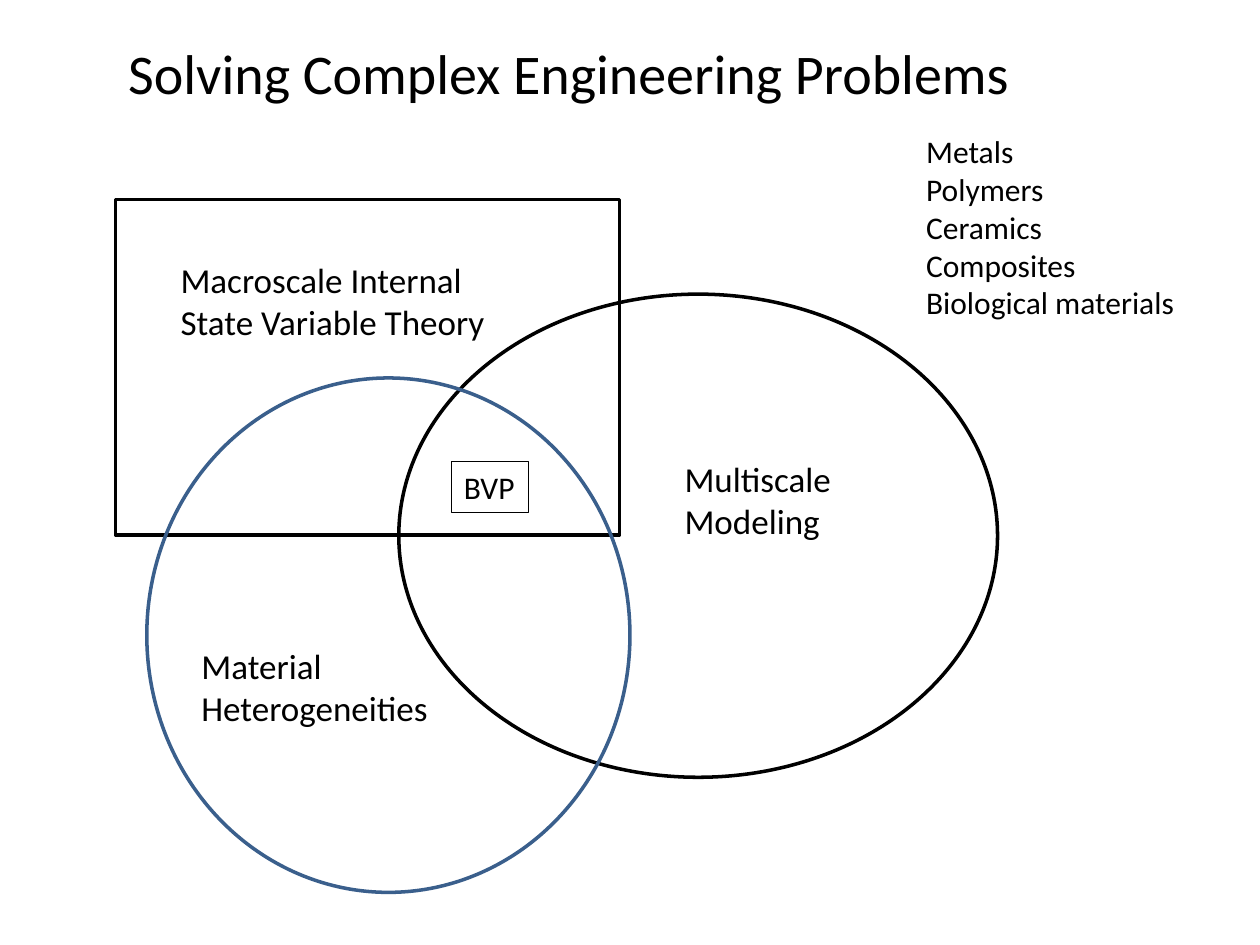
from dataclasses import dataclass

from pptx import Presentation
from pptx.dml.color import RGBColor
from pptx.enum.shapes import MSO_SHAPE as Shape
from pptx.enum.text import MSO_ANCHOR as Anchor, MSO_AUTO_SIZE as AutoSize, PP_ALIGN as Align
from pptx.util import Cm, Pt


@dataclass(frozen=True)
class Theme:
    font: str = "Calibri"
    ink: RGBColor = RGBColor(0x00, 0x00, 0x00)
    blue: RGBColor = RGBColor(0x3A, 0x5F, 0x8C)
    title: int = 32
    label: int = 20
    small: int = 18
    outline: float = 2
    hairline: float = 0.75


THEME = Theme()


def place(shape, left, top, width, height):
    shape.left, shape.top = Cm(left), Cm(top)
    shape.width, shape.height = Cm(width), Cm(height)


def write(shape, lines, size):
    """Fill a shape with left-aligned, unwrapped lines, one paragraph each."""
    frame = shape.text_frame
    frame.text = "\n".join(lines)
    frame.word_wrap = False
    frame.auto_size = AutoSize.SHAPE_TO_FIT_TEXT
    frame.vertical_anchor = Anchor.TOP
    for para in frame.paragraphs:
        para.alignment = Align.LEFT
        para.font.name = THEME.font
        para.font.size = Pt(size)
        para.font.color.rgb = THEME.ink


def add_title(page, text, bounds):
    title = page.shapes.title
    place(title, *bounds)
    write(title, [text], THEME.title)


def add_text(page, lines, bounds, size=THEME.label):
    box = page.shapes.add_textbox(*map(Cm, bounds))
    write(box, lines, size)
    return box


def add_outline(page, kind, bounds, color=THEME.ink):
    shape = page.shapes.add_shape(kind, *map(Cm, bounds))
    shape.shadow.inherit = False
    shape.fill.background()
    shape.line.color.rgb = color
    shape.line.width = Pt(THEME.outline)


def main():
    deck = Presentation()
    deck.slide_width, deck.slide_height = Cm(25.4), Cm(19.05)
    page = deck.slides.add_slide(deck.slide_layouts[5])

    add_title(page, "Solving Complex Engineering Problems", (2.33, 0.64, 18.47, 1.62))

    # Three overlapping fields, each with its label
    add_outline(page, Shape.RECTANGLE, (2.33, 4.02, 10.16, 6.77))
    add_text(page, ["Macroscale Internal", "State Variable Theory"], (3.39, 5.08, 6.71, 1.96))

    add_outline(page, Shape.OVAL, (8.04, 5.93, 12.07, 9.74))
    add_text(page, ["Multiscale", "Modeling"], (13.55, 9.1, 3.51, 1.96))

    add_outline(page, Shape.OVAL, (2.96, 7.62, 9.74, 10.37), THEME.blue)
    add_text(page, ["Material", "Heterogeneities"], (3.81, 12.86, 5.21, 1.98))

    # Framed label where the fields meet
    core = add_text(page, ["BVP"], (9.1, 9.31, 1.55, 1.03), THEME.small)
    core.line.color.rgb = THEME.ink
    core.line.width = Pt(THEME.hairline)

    # List of materials
    materials = ["Metals", "Polymers", "Ceramics", "Composites", "Biological materials"]
    add_text(page, materials, (18.42, 2.54, 5.56, 4.11), THEME.small)

    deck.save("out.pptx")


if __name__ == "__main__":
    main()
